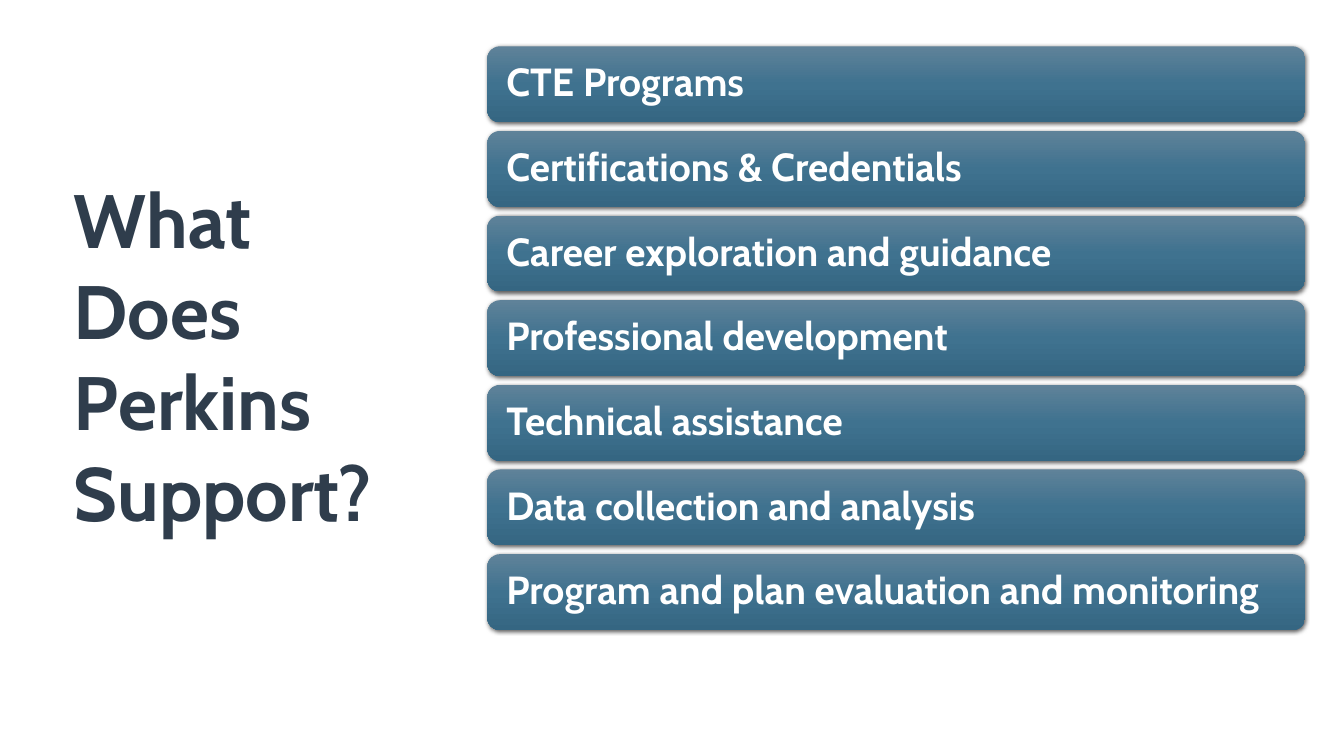
from copy import deepcopy
from dataclasses import dataclass

from lxml import etree
from pptx import Presentation
from pptx.dml.color import RGBColor
from pptx.enum.shapes import MSO_SHAPE
from pptx.enum.text import MSO_ANCHOR, MSO_AUTO_SIZE, PP_ALIGN
from pptx.oxml.ns import qn
from pptx.util import Cm, Pt

ROUNDED = MSO_SHAPE.ROUNDED_RECTANGLE
MIDDLE = MSO_ANCHOR.MIDDLE
NO_AUTOFIT = MSO_AUTO_SIZE.NONE
LEFT = PP_ALIGN.LEFT
TITLE_ONLY = 5

TITLE = "What Does Perkins Support?"
SUPPORTED_AREAS = [
    "CTE Programs",
    "Certifications & Credentials",
    "Career exploration and guidance",
    "Professional development",
    "Technical assistance",
    "Data collection and analysis",
    "Program and plan evaluation and monitoring",
]
BAR_LEFT, BAR_TOP = 18.42, 1.75
BAR_WIDTH, BAR_HEIGHT = 30.91, 2.87
BAR_PITCH = 3.2


@dataclass(frozen=True)
class Theme:
    font: str = "Cabin"
    background: str = "FFFFFF"
    title_color: str = "2F3D4C"
    title_size: int = 81
    bar_text_color: str = "FFFFFF"
    bar_text_size: int = 42
    bar_gradient: tuple = ("5F8299", "3F728F", "356682")
    shadow_color: str = "000000"


class SlideBuilder:
    def __init__(self, slide, theme):
        self.slide = slide
        self.theme = theme
        fill = slide.background.fill
        fill.solid()
        fill.fore_color.rgb = RGBColor.from_string(theme.background)

    def set_text(self, text_frame, text, size, color):
        text_frame.word_wrap = True
        text_frame.auto_size = NO_AUTOFIT
        text_frame.vertical_anchor = MIDDLE
        paragraph = text_frame.paragraphs[0]
        paragraph.alignment = LEFT
        run = paragraph.add_run()
        run.text = text
        run.font.name = self.theme.font
        run.font.size = Pt(size)
        run.font.bold = True
        run.font.color.rgb = RGBColor.from_string(color)
        return paragraph

    def title(self, text, left, top, width, height):
        shape = self.slide.shapes.title
        shape.left, shape.top = Cm(left), Cm(top)
        shape.width, shape.height = Cm(width), Cm(height)
        paragraph = self.set_text(shape.text_frame, text,
                                  self.theme.title_size,
                                  self.theme.title_color)
        paragraph.line_spacing = 1.0

    def bar(self, text, left, top, width, height):
        shape = self.slide.shapes.add_shape(
            ROUNDED, Cm(left), Cm(top), Cm(width), Cm(height))
        shape.line.fill.background()
        self.fill_gradient(shape)
        self.add_shadow(shape)
        frame = shape.text_frame
        frame.margin_left = frame.margin_right = Cm(0.58)
        paragraph = self.set_text(frame, text, self.theme.bar_text_size,
                                  self.theme.bar_text_color)
        paragraph.line_spacing = 0.9

    def fill_gradient(self, shape):
        """Spread the theme's bar colours evenly from top to bottom."""
        colors = self.theme.bar_gradient
        shape.fill.gradient()
        shape.fill.gradient_angle = 270
        stop_list = next(shape.element.iter(qn("a:gsLst")))
        while len(stop_list) < len(colors):
            stop_list.append(deepcopy(stop_list[0]))
        for index, stop in enumerate(shape.fill.gradient_stops):
            stop.position = index / (len(colors) - 1)
            stop.color.rgb = RGBColor.from_string(colors[index])

    def add_shadow(self, shape):
        shape.shadow.inherit = False
        effects = next(shape.element.iter(qn("a:effectLst")))
        shadow = etree.SubElement(
            effects, qn("a:outerShdw"), blurRad=str(Pt(4.5)),
            dist=str(Pt(1.5)), dir="5400000", rotWithShape="0")
        color = etree.SubElement(shadow, qn("a:srgbClr"),
                                 val=self.theme.shadow_color)
        etree.SubElement(color, qn("a:alpha"), val="63000")


def main():
    presentation = Presentation()
    presentation.slide_width = Cm(50.8)
    presentation.slide_height = Cm(28.58)
    slide = presentation.slides.add_slide(
        presentation.slide_layouts[TITLE_ONLY])

    builder = SlideBuilder(slide, Theme())
    builder.title(TITLE, 2.54, 3.51, 12.9, 19.81)
    for index, area in enumerate(SUPPORTED_AREAS):
        builder.bar(area, BAR_LEFT, BAR_TOP + index * BAR_PITCH,
                    BAR_WIDTH, BAR_HEIGHT)

    presentation.save("out.pptx")


if __name__ == "__main__":
    main()
